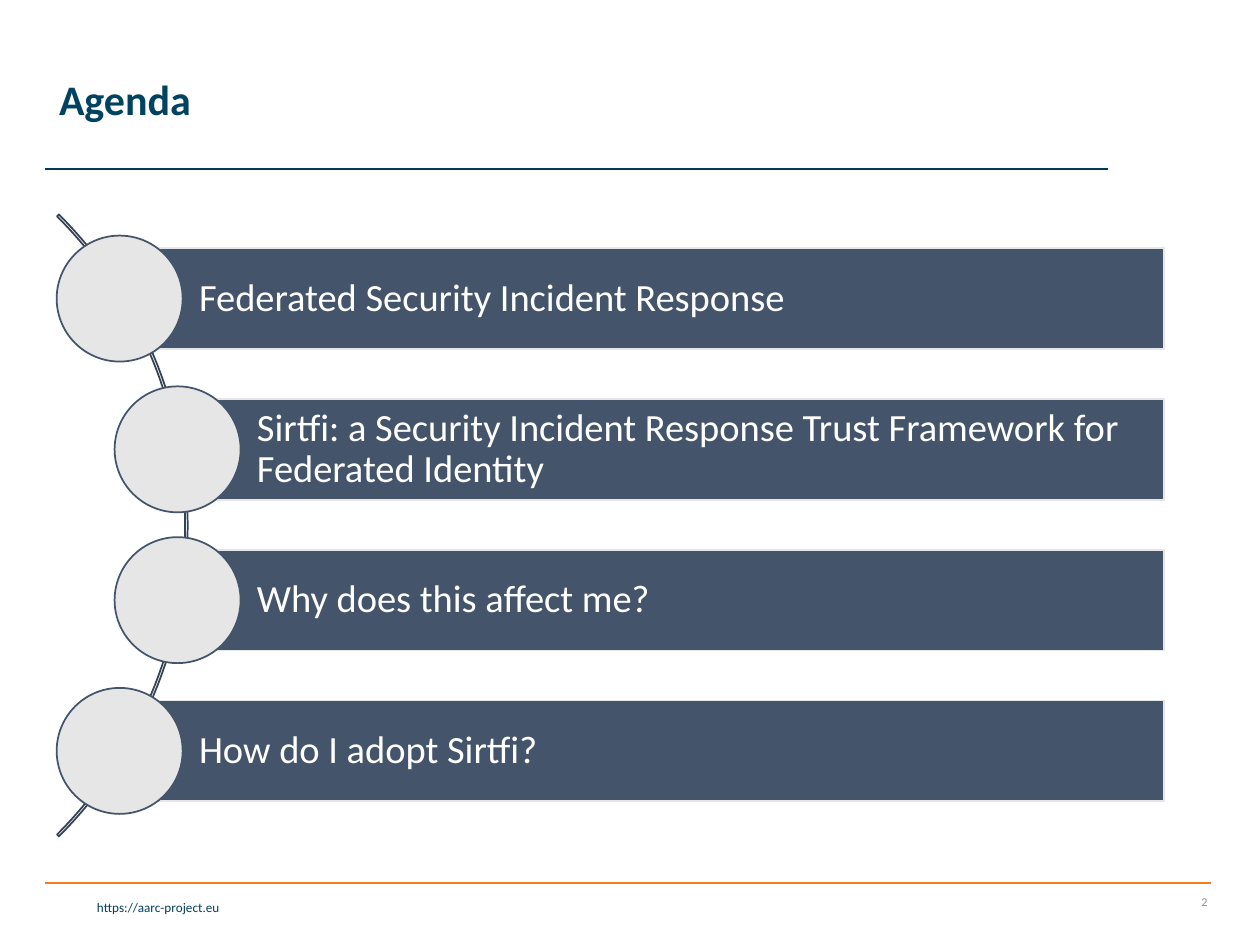
"""Build the agenda slide: four bars with circles along an arc."""
from pptx import Presentation
from pptx.dml.color import RGBColor
from pptx.enum.shapes import MSO_CONNECTOR, MSO_SHAPE
from pptx.enum.text import MSO_ANCHOR, PP_ALIGN
from pptx.oxml.ns import qn
from pptx.util import Inches, Pt
from lxml import etree

LEFT, RIGHT = PP_ALIGN.LEFT, PP_ALIGN.RIGHT
TOP, MIDDLE = MSO_ANCHOR.TOP, MSO_ANCHOR.MIDDLE
ARC, BAR, CIRCLE = MSO_SHAPE.BLOCK_ARC, MSO_SHAPE.RECTANGLE, MSO_SHAPE.OVAL
STRAIGHT = MSO_CONNECTOR.STRAIGHT

FONT = "Calibri"
NAVY = RGBColor(0x00, 0x43, 0x61)
LINK = RGBColor(0x00, 0x3F, 0x5E)
RULE = RGBColor(0x00, 0x39, 0x59)
ORANGE = RGBColor(0xF5, 0x7B, 0x20)
SLATE = RGBColor(0x44, 0x54, 0x6A)
DARK_SLATE = RGBColor(0x36, 0x43, 0x55)
PALE = RGBColor(0xE7, 0xE6, 0xE6)
GRAY = RGBColor(0x8C, 0x8C, 0x8C)
WHITE = RGBColor(0xFF, 0xFF, 0xFF)

TITLE = "Agenda"
FOOTER = "https://aarc-project.eu"
PAGE_NUMBER = "2"
AGENDA = [
    ("Federated Security Incident Response", 0.95),
    ("Sirtfi: a Security Incident Response Trust Framework for Federated Identity", 1.41),
    ("Why does this affect me?", 1.41),
    ("How do I adopt Sirtfi?", 0.95),
]
RULES = [((0.36, 7.01), (9.61, 7.01), ORANGE), ((8.79, 1.34), (0.36, 1.34), RULE)]

BAR_RIGHT, BAR_HEIGHT, DIAMETER = 9.24, 0.8, 1
FIRST_TOP, LAST_TOP = 1.97, 5.56


def write_text(shape, text, size, color, bold=False, align=LEFT, anchor=MIDDLE,
               spacing=1.0, insets=(0.1, 0.05, 0.1, 0.05)):
    frame = shape.text_frame
    frame.word_wrap = True
    frame.vertical_anchor = anchor
    frame.margin_left, frame.margin_top, frame.margin_right, frame.margin_bottom = map(Inches, insets)
    para = frame.paragraphs[0]
    para.alignment = align
    para.line_spacing = spacing
    span = para.add_run()
    span.text = text
    span.font.name = FONT
    span.font.size = Pt(size)
    span.font.bold = bold
    span.font.color.rgb = color


def add_text(page, place, text, **form):
    write_text(page.shapes.add_textbox(*map(Inches, place)), text, **form)


def add_figure(page, kind, place, line, fill=None):
    shape = page.shapes.add_shape(kind, *map(Inches, place))
    shape.shadow.inherit = False
    if fill is None:
        shape.fill.background()
    else:
        shape.fill.solid()
        shape.fill.fore_color.rgb = fill
    shape.line.color.rgb = line
    shape.line.width = Pt(1)
    return shape


def add_rule(page, start, end, color):
    rule = page.shapes.add_connector(STRAIGHT, *map(Inches, start + end))
    rule.line.color.rgb = color
    rule.line.width = Pt(1)
    etree.SubElement(rule._element.spPr, qn("a:effectLst"))


def add_agenda(page):
    arc = add_figure(page, ARC, (-5.49, 0.68, 6.98, 6.98), DARK_SLATE)
    for index, value in enumerate((189, 27, 0.003)):
        arc.adjustments[index] = value
    pitch = (LAST_TOP - FIRST_TOP) / (len(AGENDA) - 1)
    for index, (topic, left) in enumerate(AGENDA):
        top = FIRST_TOP + index * pitch
        bar = add_figure(page, BAR, (left, top, BAR_RIGHT - left, BAR_HEIGHT), PALE, SLATE)
        write_text(bar, topic, size=22, color=WHITE, spacing=0.9, insets=(0.63, 0.06, 0.06, 0.06))
        circle_top = top + (BAR_HEIGHT - DIAMETER) / 2
        add_figure(page, CIRCLE, (left - DIAMETER / 2, circle_top, DIAMETER, DIAMETER), SLATE, PALE)


def main():
    deck = Presentation()
    deck.slide_width, deck.slide_height = Inches(10), Inches(7.5)
    page = deck.slides.add_slide(deck.slide_layouts[6])
    for start, end, color in RULES:
        add_rule(page, start, end, color)
    add_text(page, (0.35, 7.09, 1.49, 0.23), FOOTER, size=7.5, color=LINK, align=RIGHT, anchor=TOP)
    add_agenda(page)
    add_text(page, (9.07, 7.01, 0.61, 0.3), PAGE_NUMBER, size=6.8, color=GRAY, align=RIGHT)
    add_text(page, (0.37, 0.08, 7.88, 1.45), TITLE, size=24, color=NAVY, bold=True, spacing=0.9)
    deck.save("out.pptx")


if __name__ == "__main__":
    main()
